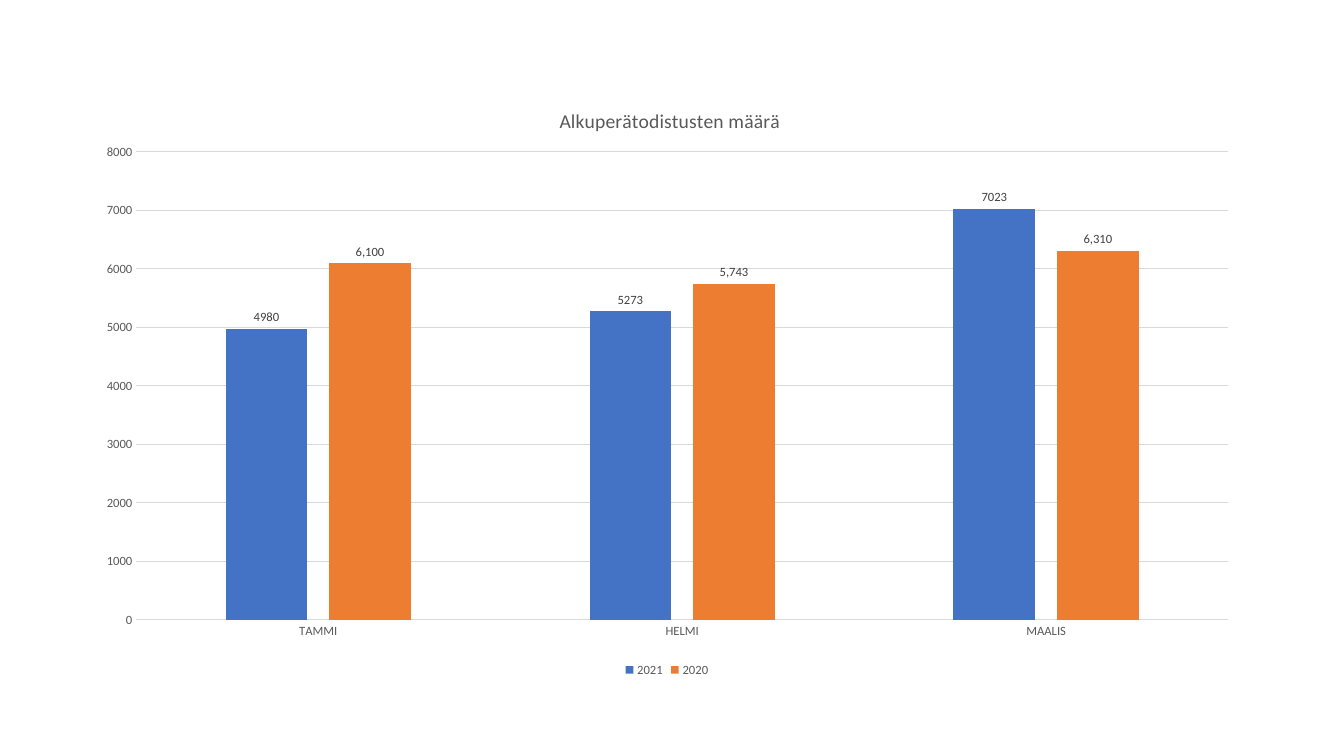
from dataclasses import dataclass

from lxml import etree
from pptx import Presentation
from pptx.chart.data import CategoryChartData
from pptx.dml.color import RGBColor
from pptx.enum.chart import XL_CHART_TYPE as ChartType
from pptx.enum.chart import XL_LABEL_POSITION as LabelPosition
from pptx.enum.chart import XL_LEGEND_POSITION as LegendPosition
from pptx.enum.chart import XL_TICK_MARK as TickMark
from pptx.oxml.ns import qn
from pptx.util import Cm, Pt


@dataclass(frozen=True)
class Theme:
    font: str = "Calibri"
    text: str = "595959"
    label: str = "404040"
    rule: str = "D9D9D9"
    title_size: int = 14
    base_size: int = 10
    small_size: int = 9
    rule_width: float = 0.75


THEME = Theme()
MONTHS = ["TAMMI", "HELMI", "MAALIS"]
# Year, monthly certificates, bar colour, label format
YEARS = [
    ("2021", [4980, 5273, 7023], "4472C4", "0"),
    ("2020", [6100, 5743, 6310], "ED7D31", "#,##0"),
]


def style_font(font, size, color):
    font.name = THEME.font
    font.size = Pt(size)
    font.bold = False
    font.color.rgb = RGBColor.from_string(color)


def style_rule(line):
    line.color.rgb = RGBColor.from_string(THEME.rule)
    line.width = Pt(THEME.rule_width)


def place(element, index, **settings):
    """Give a chart part a fixed place, in fractions of the chart."""
    for old in element.findall(qn("c:layout")):
        element.remove(old)
    layout = etree.Element(qn("c:layout"))
    manual = etree.SubElement(layout, qn("c:manualLayout"))
    for name, value in settings.items():
        etree.SubElement(manual, qn(f"c:{name}")).set("val", str(value))
    element.insert(index, layout)


def add_title(chart, text):
    frame = chart.chart_title.text_frame
    frame.text = text
    style_font(frame.paragraphs[0].runs[0].font, THEME.title_size, THEME.text)
    place(chart.chart_title._element, 1, xMode="edge", yMode="edge", x=0.405, y=0.04)


def style_axes(chart):
    for axis in (chart.category_axis, chart.value_axis):
        axis.major_tick_mark = axis.minor_tick_mark = TickMark.NONE
        style_font(axis.tick_labels.font, THEME.small_size, THEME.text)
    style_rule(chart.category_axis.format.line)

    values = chart.value_axis
    values.minimum_scale, values.maximum_scale, values.major_unit = 0, 8000, 1000
    values.format.line.fill.background()
    values.has_major_gridlines = True
    style_rule(values.major_gridlines.format.line)
    values.tick_labels.number_format = "0"
    values.tick_labels.number_format_is_linked = False


def style_series(series, color, number_format):
    series.format.fill.solid()
    series.format.fill.fore_color.rgb = RGBColor.from_string(color)
    series.invert_if_negative = False
    labels = series.data_labels
    labels.show_value = True
    labels.position = LabelPosition.OUTSIDE_END
    labels.number_format = number_format
    labels.number_format_is_linked = False
    style_font(labels.font, THEME.small_size, THEME.label)


def add_legend(chart):
    chart.has_legend = True
    chart.legend.position = LegendPosition.BOTTOM
    chart.legend.include_in_layout = False
    style_font(chart.legend.font, THEME.small_size, THEME.text)


def add_column_chart(page):
    data = CategoryChartData()
    data.categories = MONTHS
    for year, counts, _, number_format in YEARS:
        data.add_series(year, counts, number_format)
    chart = page.shapes.add_chart(
        ChartType.COLUMN_CLUSTERED, Cm(2.08), Cm(2.01), Cm(29.46), Cm(15.16), data
    ).chart
    style_font(chart.font, THEME.base_size, "000000")

    # Bars
    plot = chart.plots[0]
    plot.gap_width, plot.overlap, plot.vary_by_categories = 219, -27, False
    for series, (_, _, color, number_format) in zip(plot.series, YEARS):
        style_series(series, color, number_format)

    # Title, axes and legend
    add_title(chart, "Alkuperätodistusten määrä")
    style_axes(chart)
    add_legend(chart)
    plot_area = chart._chartSpace.chart.plotArea
    place(plot_area, 0, layoutTarget="inner", xMode="edge", yMode="edge",
          x=0.046, y=0.12, w=0.934, h=0.778)


def main():
    deck = Presentation()
    deck.slide_width, deck.slide_height = Cm(33.87), Cm(19.05)
    page = deck.slides.add_slide(deck.slide_layouts[6])
    add_column_chart(page)
    deck.save("out.pptx")


if __name__ == "__main__":
    main()
